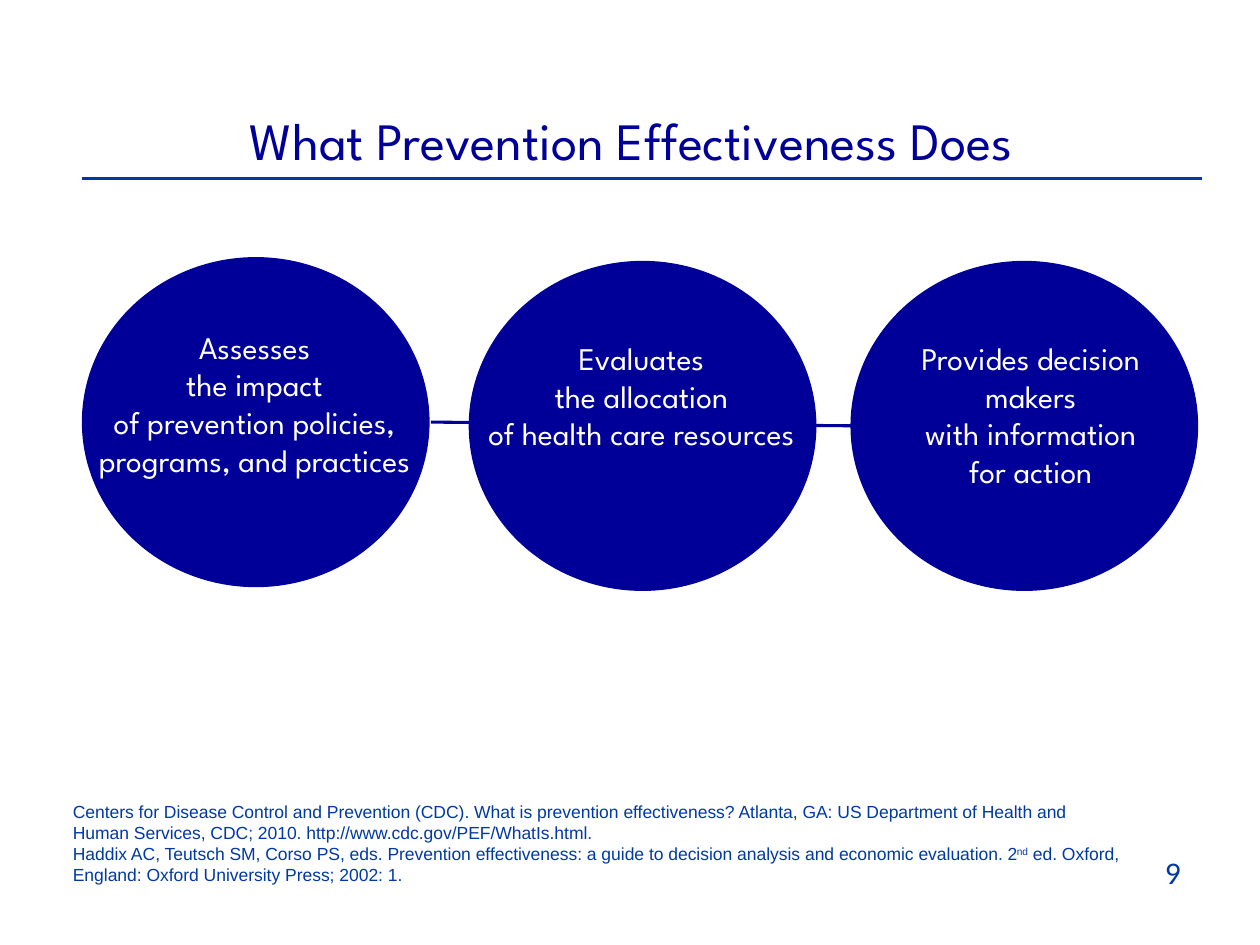
from dataclasses import dataclass

from lxml.etree import SubElement
from pptx import Presentation
from pptx.dml.color import RGBColor as RGB
from pptx.enum.shapes import MSO_CONNECTOR as Connector, MSO_SHAPE as Shape
from pptx.enum.text import MSO_ANCHOR as Anchor, MSO_AUTO_SIZE as AutoSize, PP_ALIGN as Align
from pptx.oxml.ns import qn
from pptx.util import Inches, Pt


@dataclass(frozen=True)
class Theme:
    navy: RGB = RGB(0x00, 0x00, 0x99)
    blue: RGB = RGB(0x00, 0x39, 0xA6)
    white: RGB = RGB(0xFF, 0xFF, 0xFF)
    display: str = "League Spartan"
    reference: str = "Arial"
    number: str = "Calibri"
    title_size: float = 30
    body_size: float = 18
    reference_size: float = 10
    line_width: float = 1.75


@dataclass(frozen=True)
class Role:
    """A circle and the text box laid over it, in inches."""
    text: str
    left: float
    top: float
    text_left: float
    text_top: float
    text_height: float


THEME = Theme()
CIRCLE_W, CIRCLE_H, LABEL_W = 2.76, 2.62, 2.68

ROLES = [
    Role("Assesses\nthe impact\nof prevention policies, programs, and practices",
         0.65, 2.04, 0.68, 2.55, 1.62),
    Role("Evaluates\nthe allocation\nof health care resources",
         3.72, 2.07, 3.75, 2.64, 1.31),
    Role("Provides decision makers\nwith information\nfor action",
         6.75, 2.07, 6.84, 2.64, 1.31),
]

# Carets enclose superscript text
REFERENCES = [
    "Centers for Disease Control and Prevention (CDC). What is prevention effectiveness? "
    "Atlanta, GA: US Department of Health and Human Services, CDC; 2010. "
    "http://www.cdc.gov/PEF/WhatIs.html.",
    "Haddix AC, Teutsch SM, Corso PS, eds. Prevention effectiveness: a guide to decision "
    "analysis and economic evaluation. 2^nd^ ed. Oxford, England: Oxford University Press; "
    "2002: 1.",
]


def write_text(sp, *paragraphs: str, font: str, size: float, color: RGB,
               align: Align = Align.LEFT, auto_size: AutoSize = AutoSize.SHAPE_TO_FIT_TEXT) -> None:
    tf = sp.text_frame
    tf.word_wrap = True
    tf.auto_size = auto_size
    tf.vertical_anchor = Anchor.TOP
    for i, text in enumerate(paragraphs):
        p = tf.add_paragraph() if i else tf.paragraphs[0]
        p.alignment = align
        for n, line in enumerate(text.split("\n")):
            if n:
                p.add_line_break()
            for j, part in enumerate(line.split("^")):
                r = p.add_run()
                r.text = part
                r.font.name, r.font.size = font, Pt(size)
                r.font.color.rgb = color
                if j % 2:
                    r._r.get_or_add_rPr().set("baseline", "30000")


def add_text(s, box: tuple[float, ...], *paragraphs: str, **style) -> None:
    write_text(s.shapes.add_textbox(*map(Inches, box)), *paragraphs, **style)


def add_line(s, ends: tuple[float, ...], color: RGB) -> None:
    line = s.shapes.add_connector(Connector.STRAIGHT, *map(Inches, ends))
    line.line.color.rgb = color
    line.line.width = Pt(THEME.line_width)
    SubElement(line._element.spPr, qn("a:effectLst"))


def add_role(s, role: Role) -> None:
    box = map(Inches, (role.left, role.top, CIRCLE_W, CIRCLE_H))
    circle = s.shapes.add_shape(Shape.OVAL, *box)
    circle.shadow.inherit = False
    circle.fill.solid()
    circle.fill.fore_color.rgb = THEME.navy
    circle.line.fill.background()
    add_text(s, (role.text_left, role.text_top, LABEL_W, role.text_height), role.text,
             font=THEME.display, size=THEME.body_size, color=THEME.white, align=Align.CENTER)


def main() -> None:
    prs = Presentation()
    prs.slide_width, prs.slide_height = Inches(10), Inches(7.5)
    s = prs.slides.add_slide(prs.slide_layouts[5])

    # Title and rule
    title = s.shapes.title
    title.left, title.top, title.width, title.height = map(Inches, (0.61, 0.81, 8.8, 0.61))
    write_text(title, "What Prevention Effectiveness Does", font=THEME.display,
               size=THEME.title_size, color=THEME.navy, align=Align.CENTER)
    add_line(s, (0.65, 1.42, 9.54, 1.42), THEME.blue)

    # Linked circles, with the link running behind them
    add_line(s, (3.42, 3.35, 6.83, 3.38), THEME.navy)
    for role in ROLES:
        add_role(s, role)

    # References and page number
    add_text(s, (0.48, 6.31, 8.52, 0.77), *REFERENCES, font=THEME.reference,
             size=THEME.reference_size, color=THEME.blue)
    add_text(s, (7.14, 6.72, 2.33, 0.52), "9", font=THEME.number, size=THEME.body_size,
             color=THEME.blue, align=Align.RIGHT, auto_size=AutoSize.NONE)

    prs.save("out.pptx")


if __name__ == "__main__":
    main()
